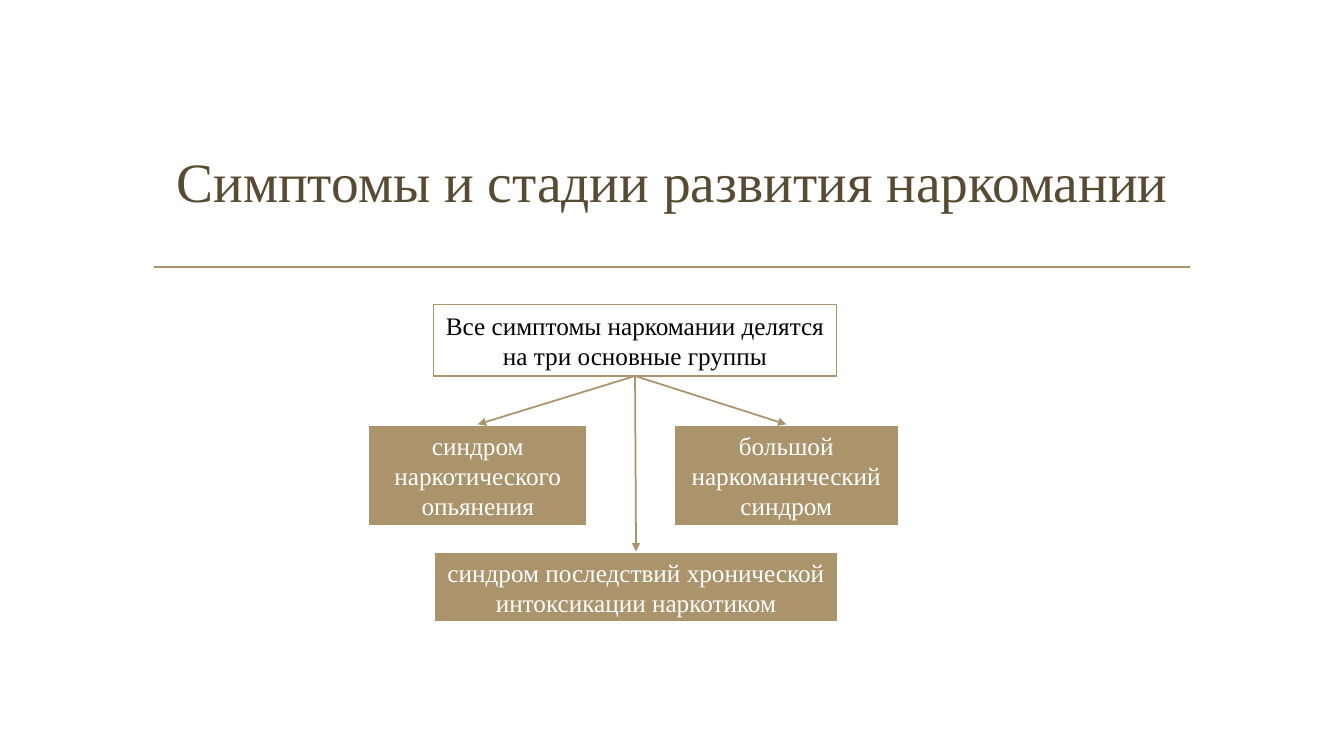
from lxml import etree
from pptx import Presentation
from pptx.dml.color import RGBColor
from pptx.enum.shapes import MSO_CONNECTOR, MSO_SHAPE
from pptx.enum.text import MSO_ANCHOR, MSO_AUTO_SIZE, PP_ALIGN
from pptx.oxml.ns import qn
from pptx.util import Inches, Pt

STRAIGHT = MSO_CONNECTOR.STRAIGHT
RECTANGLE = MSO_SHAPE.RECTANGLE
MIDDLE = MSO_ANCHOR.MIDDLE
CENTER = PP_ALIGN.CENTER
NO_FIT = MSO_AUTO_SIZE.NONE
GROW = MSO_AUTO_SIZE.SHAPE_TO_FIT_TEXT

SAND = RGBColor(0xAB, 0x94, 0x6B)
BROWN = RGBColor(0x59, 0x4B, 0x32)
WHITE = RGBColor(0xFF, 0xFF, 0xFF)
BLACK = RGBColor(0x00, 0x00, 0x00)

COLUMNS, ROWS = 160, 90
BOTTOM, TOP = 2, 0
TITLE_ONLY = 5


class SymptomSlide:
    font_name = "Times New Roman"
    line_width = 1.25

    def __init__(self, deck):
        self.column = deck.slide_width / COLUMNS
        self.row = deck.slide_height / ROWS
        self.page = deck.slides.add_slide(deck.slide_layouts[TITLE_ONLY])

    def place(self, *cells):
        units = (self.column, self.row) * 2
        return [round(cell * unit) for cell, unit in zip(cells, units)]

    def label(self, shape, text, size, color, fit):
        frame = shape.text_frame
        frame_format = {"word_wrap": True, "auto_size": fit, "vertical_anchor": MIDDLE}
        for name, value in frame_format.items():
            setattr(frame, name, value)
        para = frame.paragraphs[0]
        para.alignment = CENTER
        span = para.add_run()
        span.text = text
        span.font.color.rgb = color
        for name, value in {"name": self.font_name, "size": Pt(size)}.items():
            setattr(span.font, name, value)

    def title(self, text, cells):
        title = self.page.shapes.title
        for name, value in zip(("left", "top", "width", "height"), self.place(*cells)):
            setattr(title, name, value)
        self.label(title, text, 39.6, BROWN, NO_FIT)

    def box(self, text, cells, fill=SAND, line=WHITE, color=WHITE, width=2):
        box = self.page.shapes.add_shape(RECTANGLE, *self.place(*cells))
        box.shadow.inherit = False
        box.fill.solid()
        box.fill.fore_color.rgb = fill
        box.line.color.rgb = line
        box.line.width = Pt(width)
        self.label(box, text, 18, color, GROW)
        return box

    def rule(self, *cells):
        rule = self.page.shapes.add_connector(STRAIGHT, *self.place(*cells))
        rule.line.color.rgb = SAND
        rule.line.width = Pt(self.line_width)
        etree.SubElement(rule._element.spPr, qn("a:effectLst"))
        return rule

    def arrow(self, source, target):
        arrow = self.rule(0, 0, 0, 0)
        arrow.begin_connect(source, BOTTOM)
        arrow.end_connect(target, TOP)
        etree.SubElement(arrow.get_or_add_ln(), qn("a:tailEnd"), type="triangle")


def main():
    deck = Presentation()
    deck.slide_width = Inches(13.33)
    deck.slide_height = Inches(7.5)
    slide = SymptomSlide(deck)

    slide.rule(18.36, 31.8, 141.72, 31.8)
    slide.title("Симптомы и стадии развития наркомании", (17.04, 12.84, 126, 17.16))
    symptoms = slide.box(
        "Все симптомы наркомании делятся на три основные группы",
        (51.6, 36.24, 48, 8.52),
        fill=WHITE, line=SAND, color=BLACK, width=slide.line_width,
    )
    groups = {
        "синдром наркотического опьянения": (43.8, 50.52, 26.16, 12.12),
        "большой наркоманический синдром": (80.16, 50.52, 26.88, 12.12),
        "синдром последствий хронической интоксикации наркотиком": (51.6, 65.64, 48.24, 8.52),
    }
    boxes = [slide.box(text, cells) for text, cells in groups.items()]
    for group in boxes:
        slide.arrow(symptoms, group)

    deck.save("out.pptx")


if __name__ == "__main__":
    main()
